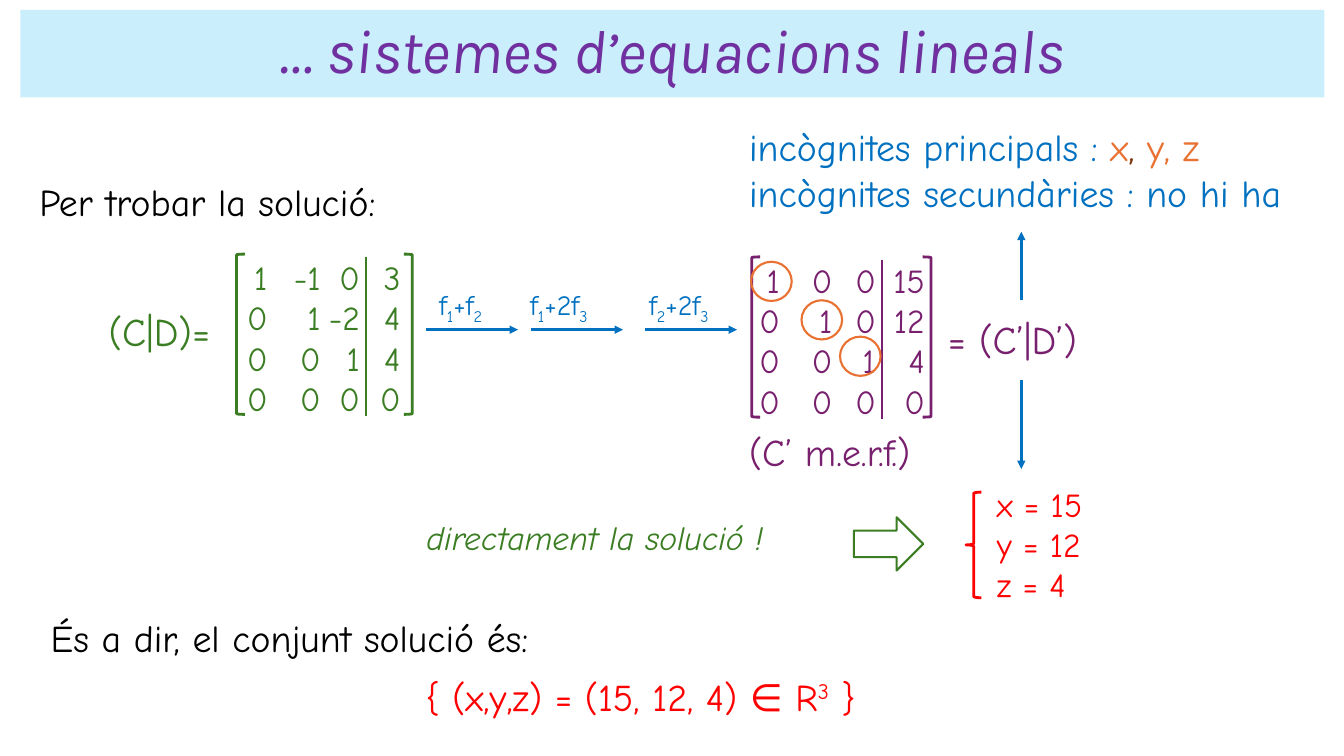
import pptx
import pptx.util
import pptx.dml.color
import pptx.enum.shapes
import pptx.enum.text
import pptx.oxml
import pptx.oxml.ns

Pt = pptx.util.Pt
SHAPE = pptx.enum.shapes.MSO_SHAPE
COLORS = {
    "green": "3B7D23", "blue": "0070C0", "plum": "78206E", "violet": "7030A0",
    "orange": "E97132", "brown": "80350E", "red": "FF0000", "black": "000000",
    "band": "CAEEFB",
}
NS = pptx.oxml.ns.nsdecls("a")


def rgb(name):
    return pptx.dml.color.RGBColor.from_string(COLORS[name])


def sub(text):
    return text, {"baseline": -25000}


class Deck:
    def __init__(self, width, height, font):
        self.prs = pptx.Presentation()
        self.prs.slide_width, self.prs.slide_height = Pt(width), Pt(height)
        self.font = font
        self.s = self.prs.slides.add_slide(self.prs.slide_layouts[5])

    def add_runs(self, p, runs, **base):
        """Add runs to a paragraph; each is a string or a (string, format) pair."""
        for run in runs:
            text, own = (run, {}) if isinstance(run, str) else run
            fmt = {"name": self.font, **base, **own}
            r = p.add_run()
            r.text = text
            r.font.color.rgb = rgb(fmt.pop("color"))
            r.font.size = Pt(fmt.pop("size"))
            if "baseline" in fmt:
                r._r.get_or_add_rPr().set("baseline", str(fmt.pop("baseline")))
            for key, value in fmt.items():
                setattr(r.font, key, value)

    def title(self, text, x, y, w, h, **fmt):
        sp = self.s.shapes.title
        place = {"left": x, "top": y, "width": w, "height": h}
        for key, value in place.items():
            setattr(sp, key, Pt(value))
        sp.fill.solid()
        sp.fill.fore_color.rgb = rgb("band")
        tf = sp.text_frame
        tf.auto_size = pptx.enum.text.MSO_AUTO_SIZE.NONE
        tf.vertical_anchor = pptx.enum.text.MSO_ANCHOR.MIDDLE
        p = tf.paragraphs[0]
        p.alignment = pptx.enum.text.PP_ALIGN.CENTER
        p.line_spacing = 0.9
        self.add_runs(p, [text], **fmt)

    def text(self, lines, x, y, w, tabs=(), **fmt):
        """Add a text box with one paragraph per line and right-aligned tab stops."""
        h = len(lines) * fmt["size"] * 1.2 + 7.2
        tf = self.s.shapes.add_textbox(Pt(x), Pt(y), Pt(w), Pt(h)).text_frame
        tf.word_wrap = True
        for i, runs in enumerate(lines):
            p = tf.add_paragraph() if i else tf.paragraphs[0]
            if tabs:
                stops = "".join(f'<a:tab pos="{Pt(t)}" algn="r"/>' for t in tabs)
                p._p.get_or_add_pPr().append(
                    pptx.oxml.parse_xml(f"<a:tabLst {NS}>{stops}</a:tabLst>"))
            self.add_runs(p, runs, **fmt)

    def outline(self, kind, x, y, w, h, color, weight=2):
        sp = self.s.shapes.add_shape(kind, Pt(x), Pt(y), Pt(w), Pt(h))
        sp.shadow.inherit = False
        sp.fill.background()
        sp.line.color.rgb = rgb(color)
        sp.line.width = Pt(weight)

    def line(self, x1, y1, x2, y2, color, arrow=False):
        c = self.s.shapes.add_connector(
            pptx.enum.shapes.MSO_CONNECTOR.STRAIGHT, Pt(x1), Pt(y1), Pt(x2), Pt(y2))
        c.line.color.rgb = rgb(color)
        c.line.width = Pt(2)
        if arrow:
            c.line._get_or_add_ln().append(
                pptx.oxml.parse_xml(f'<a:tailEnd {NS} type="triangle"/>'))
        c._element.spPr.append(pptx.oxml.parse_xml(f"<a:effectLst {NS}/>"))

    def matrix(self, rows, x, y, bracket_xs, bar_x, tabs, color):
        """Add an augmented matrix: brackets, dividing bar and tabbed entries."""
        for kind, bx in zip((SHAPE.LEFT_BRACKET, SHAPE.RIGHT_BRACKET), bracket_xs):
            self.outline(kind, bx, y + 1.5, 6, 114.5, color)
        self.line(bar_x, y + 3.5, bar_x, y + 117.5, color)
        lines = [["".join(f"\t{n}" for n in row)] for row in rows]
        self.text(lines, x, y, 196, tabs, size=24, color=color)


def main():
    d = Deck(960, 540, "Comic Neue")
    d.title("… sistemes d’equacions lineals", 14.5, 7, 931.5, 62.5,
            name="Karla", size=44, italic=True, color="violet")
    d.text([["Per trobar la solució:"]], 21, 124, 480, size=27, color="black")
    d.text([["incògnites principals : ", ("x", {"color": "orange"}),
             (", ", {"color": "brown"}), ("y, z", {"color": "orange"})],
            ["incògnites secundàries : no hi ha"]],
           528, 85, 425, size=27, color="blue")

    d.text([["(C|D)="]], 70.5, 216, 99, size=28, color="green")
    d.matrix([(1, -1, 0, 3), (0, 1, -2, 4), (0, 0, 1, 4), (0, 0, 0, 0)],
             157, 180, (169, 288.5), 261.5, (27, 65, 93, 122), "green")
    d.matrix([(1, 0, 0, 15), (0, 1, 0, 12), (0, 0, 1, 4), (0, 0, 0, 0)],
             521.5, 182, (537, 659), 630, (28.5, 66, 97, 132), "plum")
    d.text([["= (C’|D’)"]], 670, 222, 120, size=28, color="plum")
    d.text([["(C’ m.e.r.f.)"]], 528, 302.5, 150, size=27, color="plum")
    for x, y in ((536.5, 187), (572.5, 214.5), (600, 240.5)):
        d.outline(SHAPE.OVAL, x, y, 29, 28, "orange", 1.5)

    steps = [(304.5, 306.5, ["f", sub("1"), "+f", sub("2")]),
             (379.5, 371.5, ["f", sub("1"), "+2f", sub("3")]),
             (461, 456.5, ["f", sub("2"), "+2f", sub("3")])]
    for arrow_x, label_x, label in steps:
        d.line(arrow_x, 235.5, arrow_x + 65.5, 235.5, "blue", arrow=True)
        d.text([label], label_x, 202, 82, size=20, color="blue")
    for start, end in ((214.5, 165.5), (271.5, 335)):
        d.line(729.5, start, 729.5, end, "blue", arrow=True)

    d.text([["directament la solució !"]], 297.5, 366, 275,
           size=24, italic=True, color="green")
    d.outline(SHAPE.RIGHT_ARROW, 610, 369.5, 49.5, 38, "green", 1.5)
    d.outline(SHAPE.LEFT_BRACE, 690, 351.5, 11, 75.5, "red")
    d.text([["x = 15"], ["y = 12"], ["z = 4"]], 705, 342, 150, size=24, color="red")

    d.text([["És a dir, el conjunt solució és:"]], 29, 435.5, 600,
           size=27, color="black")
    d.text([["{ (x,y,z) = (15, 12, 4) ∈ R", ("3", {"baseline": 30000}), " }"]],
           297, 477.5, 500, size=27, color="red")
    d.prs.save("out.pptx")


if __name__ == "__main__":
    main()
